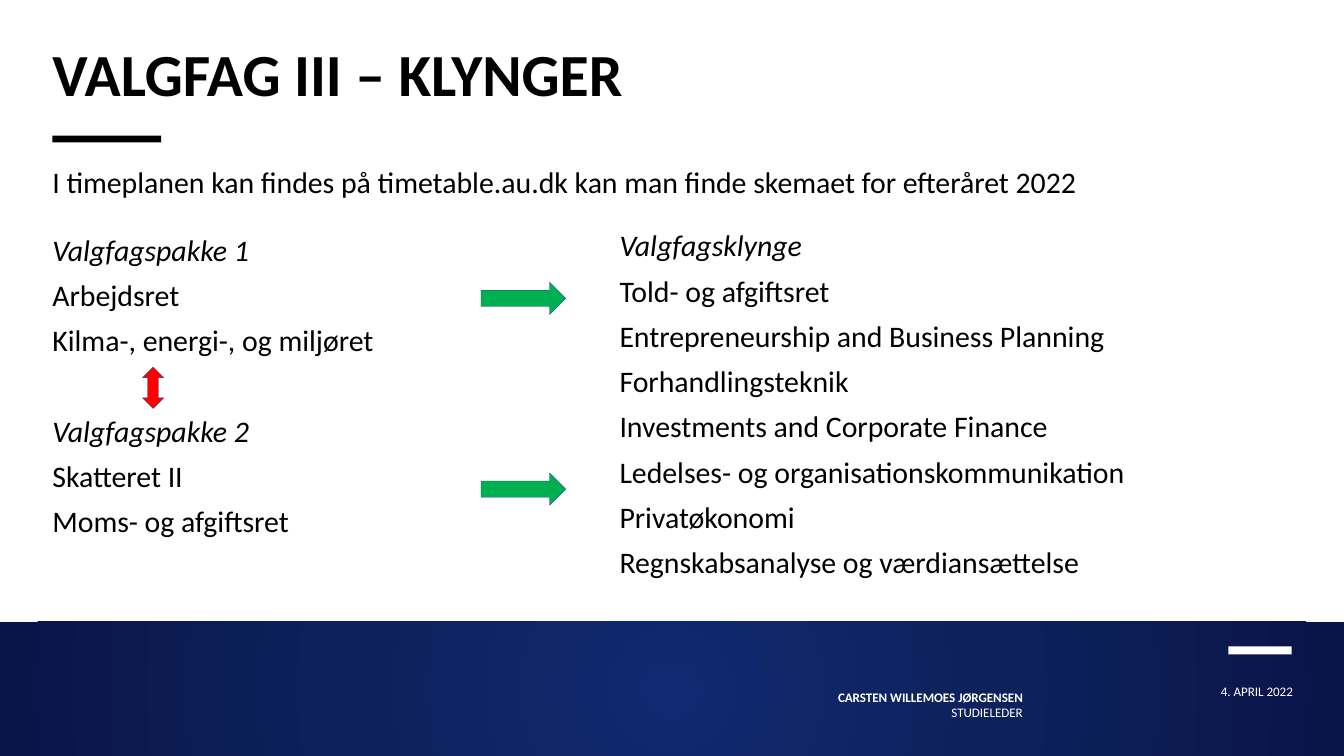
from dataclasses import dataclass
from typing import Optional

from pptx import Presentation
from pptx.dml.color import RGBColor
from pptx.enum.shapes import MSO_SHAPE as Shape
from pptx.enum.text import MSO_ANCHOR as Anchor, PP_ALIGN as Align
from pptx.oxml import parse_xml
from pptx.oxml.ns import nsdecls
from pptx.util import Inches, Pt

SLIDE_WIDTH = 10
SLIDE_HEIGHT = SLIDE_WIDTH * 9 / 16
BAND_HEIGHT = 1
BLACK = RGBColor(0x00, 0x00, 0x00)
WHITE = RGBColor(0xFF, 0xFF, 0xFF)
RED = RGBColor(0xFF, 0x00, 0x00)
GREEN = RGBColor(0x00, 0xB0, 0x50)
OUTLINE = RGBColor(0x18, 0x3D, 0x83)
BAND_STOPS = [
    (0, RGBColor(0x10, 0x29, 0x70)),
    (50, RGBColor(0x0D, 0x21, 0x5A)),
    (100, RGBColor(0x0A, 0x14, 0x49)),
]
FONT = "Calibri"
GROUP_GAP = 30.5  # paragraph gap plus one empty line, in points


@dataclass
class Line:
    text: str
    bold: bool = False
    italic: bool = False
    before: float = 0


@dataclass
class TextBlock:
    left: float
    top: float
    width: float
    height: float
    lines: list[Line]
    size: float = 16
    color: RGBColor = BLACK
    align: Align = Align.LEFT
    anchor: Anchor = Anchor.TOP
    inset_top: float = 0
    spacing: float = 0.95


@dataclass
class Block:
    kind: Shape
    left: float
    top: float
    width: float
    height: float
    fill: Optional[RGBColor] = None
    outlined: bool = False


def draw_block(page, block: Block):
    shape = page.shapes.add_shape(
        block.kind, Inches(block.left), Inches(block.top),
        Inches(block.width), Inches(block.height))
    shape.shadow.inherit = False
    if block.fill is None:
        shape.fill.background()
    else:
        shape.fill.solid()
        shape.fill.fore_color.rgb = block.fill
    if block.outlined:
        shape.line.color.rgb = OUTLINE
        shape.line.width = Pt(0.14)
    else:
        shape.line.fill.background()
    return shape


def draw_band(page) -> None:
    band = draw_block(page, Block(
        Shape.RECTANGLE, 0, SLIDE_HEIGHT - BAND_HEIGHT, SLIDE_WIDTH, BAND_HEIGHT))
    stops = "".join(
        f'<a:gs pos="{position * 1000}"><a:srgbClr val="{color}"/></a:gs>'
        for position, color in BAND_STOPS)
    gradient = parse_xml(
        f'<a:gradFill {nsdecls("a")} rotWithShape="1"><a:gsLst>{stops}</a:gsLst>'
        '<a:path path="circle">'
        '<a:fillToRect l="50000" t="50000" r="50000" b="50000"/>'
        '</a:path></a:gradFill>')
    properties = band._element.spPr
    properties.replace(properties.find("{*}noFill"), gradient)


def draw_text(page, block: TextBlock) -> None:
    box = page.shapes.add_textbox(
        Inches(block.left), Inches(block.top),
        Inches(block.width), Inches(block.height))
    frame = box.text_frame
    frame.word_wrap = True
    frame.vertical_anchor = block.anchor
    frame.margin_left = frame.margin_right = frame.margin_bottom = 0
    frame.margin_top = Inches(block.inset_top)
    for index, line in enumerate(block.lines):
        para = frame.add_paragraph() if index else frame.paragraphs[0]
        para.text = line.text
        para.alignment = block.align
        para.line_spacing = block.spacing
        para.space_before = Pt(line.before)
        para.font.name = FONT
        para.font.size = Pt(block.size)
        para.font.bold = line.bold
        para.font.italic = line.italic
        para.font.color.rgb = block.color


def course_group(heading: str, courses: list[str], before: float = 0) -> list[Line]:
    return [Line(heading, italic=True, before=before),
            *(Line(course, before=6) for course in courses)]


def main() -> None:
    deck = Presentation()
    deck.slide_width = Inches(SLIDE_WIDTH)
    deck.slide_height = Inches(SLIDE_HEIGHT)
    page = deck.slides.add_slide(deck.slide_layouts[6])

    # Footer band and accent bars
    draw_band(page)
    draw_block(page, Block(Shape.RECTANGLE, 9.14, 4.81, 0.47, 0.06, WHITE))
    draw_block(page, Block(Shape.RECTANGLE, 0.39, 1.01, 0.81, 0.05, BLACK))

    # Footer text
    draw_text(page, TextBlock(
        7.71, 4.92, 1.91, 0.35, [Line("4. APRIL 2022")],
        size=7, color=WHITE, align=Align.RIGHT, inset_top=0.24))
    draw_text(page, TextBlock(
        5.16, 5.04, 2.45, 0.32,
        [Line("CARSTEN WILLEMOES JØRGENSEN", bold=True), Line("STUDIELEDER")],
        size=7, color=WHITE, align=Align.RIGHT, inset_top=0.1))

    # Title and introduction
    draw_text(page, TextBlock(
        0.39, 0.18, 9.23, 0.63, [Line("VALGFAG III – KLYNGER", bold=True)],
        size=32, anchor=Anchor.BOTTOM, spacing=0.83))
    draw_text(page, TextBlock(
        0.39, 1.24, 9.23, 0.47,
        [Line("I timeplanen kan findes på timetable.au.dk kan man finde "
              "skemaet for efteråret 2022")]))

    # Course packages and cluster
    packages = course_group(
        "Valgfagspakke 1", ["Arbejdsret", "Kilma-, energi-, og miljøret"])
    packages += course_group(
        "Valgfagspakke 2", ["Skatteret II", "Moms- og afgiftsret"], GROUP_GAP)
    cluster = course_group("Valgfagsklynge", [
        "Told- og afgiftsret",
        "Entrepreneurship and Business Planning",
        "Forhandlingsteknik",
        "Investments and Corporate Finance",
        "Ledelses- og organisationskommunikation",
        "Privatøkonomi",
        "Regnskabsanalyse og værdiansættelse",
    ])
    draw_text(page, TextBlock(0.39, 1.74, 3.43, 2.44, packages))
    draw_text(page, TextBlock(4.61, 1.71, 4.77, 2.44, cluster))

    # Arrows between the groups
    draw_block(page, Block(Shape.UP_DOWN_ARROW, 1.06, 2.73, 0.16, 0.31, RED, True))
    for top in (2.1, 3.52):
        draw_block(page, Block(Shape.RIGHT_ARROW, 3.58, top, 0.63, 0.24, GREEN, True))

    deck.save("out.pptx")


if __name__ == "__main__":
    main()
